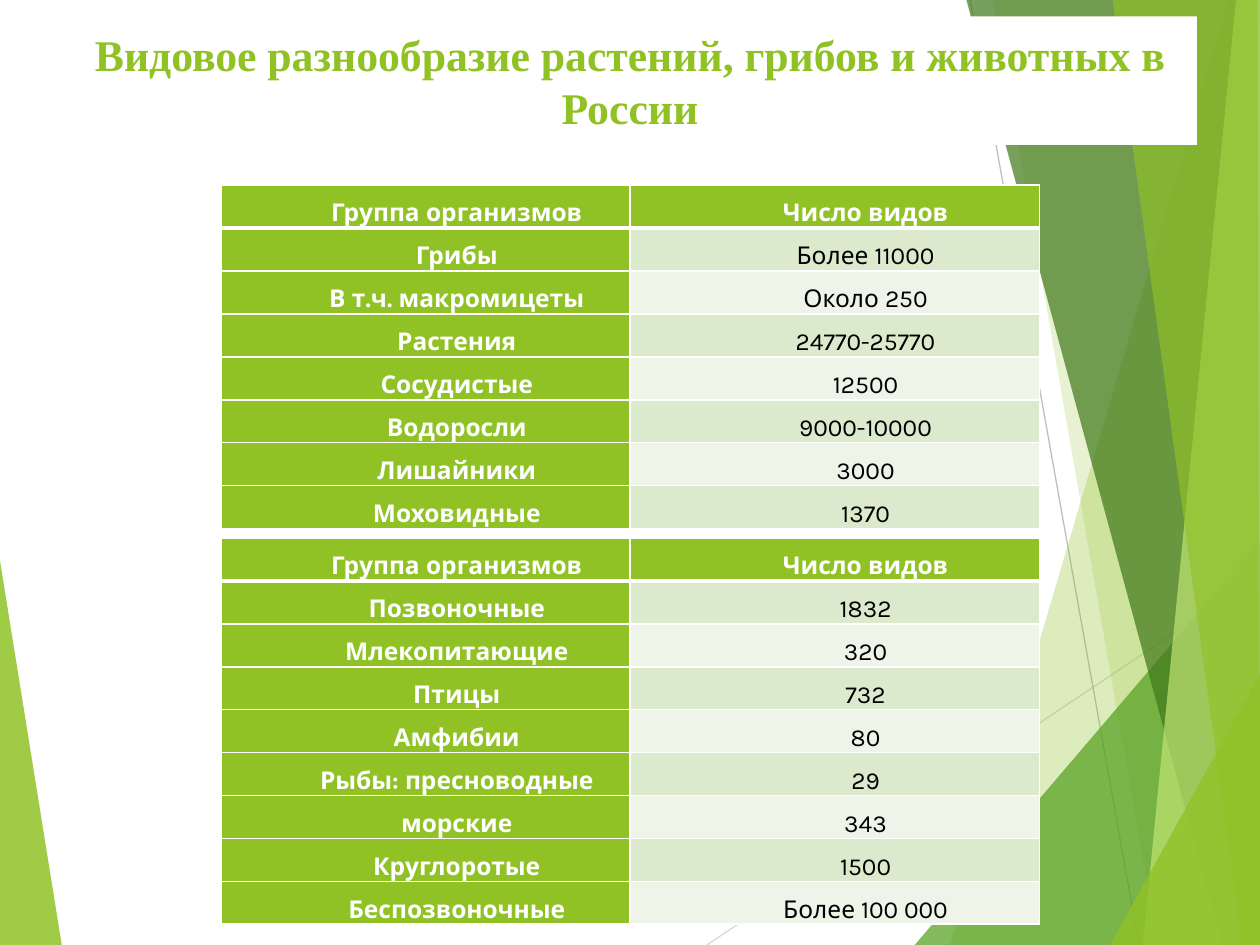
from lxml import etree
from pptx import Presentation
from pptx.dml.color import RGBColor
from pptx.enum.shapes import MSO_CONNECTOR as Connector
from pptx.enum.text import MSO_ANCHOR as Anchor, PP_ALIGN as Align
from pptx.oxml.ns import qn
from pptx.util import Inches, Pt

COLORS = {
    "lime": "90C226", "green": "54A021", "dark": "3F7819", "pale": "C0E474",
    "white": "FFFFFF", "black": "000000", "band": "DBE9CD", "light": "EEF4E8",
    "gray": "BFBFBF", "silver": "D9D9D9",
}


def write_text(frame, text, font="Karla", size=14, color="black", bold=False,
               spacing=1.0, indent=0):
    para = frame.paragraphs[0]
    para.alignment = Align.CENTER
    para.line_spacing = spacing
    properties = para._p.get_or_add_pPr()
    properties.set("marL", "0")
    properties.set("indent", str(Inches(indent)))
    span = para.add_run()
    span.text = text
    span.font.name = font
    span.font.size = Pt(size)
    span.font.bold = bold
    span.font.color.rgb = RGBColor.from_string(COLORS[color])


def add_border(cell, side, width):
    line = etree.SubElement(cell._tc.get_or_add_tcPr(), qn(f"a:ln{side}"),
                            w=str(Pt(width)))
    fill = etree.SubElement(line, qn("a:solidFill"))
    etree.SubElement(fill, qn("a:srgbClr"), val=COLORS["white"])


deck = Presentation()
deck.slide_width, deck.slide_height = Inches(10), Inches(7.5)
page = deck.slides.add_slide(deck.slide_layouts[5])

facets_behind = [
    ("lime", 85, [(0, 4.45), (0.49, 7.5), (0, 7.5)]),
]
facets_front = [
    ("lime", 30, [(9.75, 0), (7.54, 7.5), (10, 7.5), (10, 0)]),
    ("lime", 20, [(7.88, 0), (9.19, 7.5), (10, 7.5), (10, 0)]),
    ("green", 72, [(7.26, 7.5), (10, 4.29), (10, 7.5)]),
    ("dark", 70, [(7.67, 0), (9.7, 7.5), (10, 7.5), (10, 0)]),
    ("pale", 70, [(9.81, 0), (9.07, 7.5), (10, 7.5), (10, 0)]),
    ("lime", 65, [(8.83, 0), (9.86, 7.5), (10, 7.5), (9.98, 0)]),
    ("lime", 80, [(8.81, 7.5), (10, 5.35), (10, 7.5)]),
]
rays = [("silver", (5.61, 7.5), (10, 4.57)), ("gray", (7.7, 0), (9.04, 7.5))]

for color, start, end in rays:
    ray = page.shapes.add_connector(
        Connector.STRAIGHT, *(Inches(value) for value in start + end))
    ray.line.color.rgb = RGBColor.from_string(COLORS[color])
    ray.line.width = Pt(0.75)
    etree.SubElement(ray._element.spPr, qn("a:effectLst"))

for color, opacity, points in facets_behind + facets_front:
    corners = [(Inches(x), Inches(y)) for x, y in points]
    builder = page.shapes.build_freeform(*corners[0])
    builder.add_line_segments(corners[1:], close=True)
    facet = builder.convert_to_shape()
    facet.shadow.inherit = False
    facet.line.fill.background()
    facet.fill.solid()
    facet.fill.fore_color.rgb = RGBColor.from_string(COLORS[color])
    tint = facet._element.spPr.find(qn("a:solidFill"))[0]
    etree.SubElement(tint, qn("a:alpha"), val=str(opacity * 1000))

title = page.shapes.title
page.shapes._spTree.append(title._element)
title.left, title.top = Inches(0.5), Inches(0.13)
title.width, title.height = Inches(9), Inches(1.02)
title.fill.solid()
title.fill.fore_color.rgb = RGBColor.from_string(COLORS["white"])
title.text_frame.word_wrap = True
title.text_frame.vertical_anchor = Anchor.MIDDLE
write_text(title.text_frame,
           "Видовое разнообразие растений, грибов и животных в России",
           font="Times New Roman", size=25, color="lime", bold=True)

header = ("Группа организмов", "Число видов")
plants = [
    header, ("Грибы", "Более 11000"), ("В т.ч. макромицеты", "Около 250"),
    ("Растения", "24770-25770"), ("Сосудистые", "12500"),
    ("Водоросли", "9000-10000"), ("Лишайники", "3000"), ("Моховидные", "1370"),
]
animals = [
    header, ("Позвоночные", "1832"), ("Млекопитающие", "320"), ("Птицы", "732"),
    ("Амфибии", "80"), ("Рыбы: пресноводные", "29"), ("морские", "343"),
    ("Круглоротые", "1500"), ("Беспозвоночные", "Более 100 000"),
]
row_height = 0.34

for top, rows in [(1.47, plants), (4.27, animals)]:
    table = page.shapes.add_table(
        len(rows), 2, Inches(1.76), Inches(top), Inches(6.49),
        Inches(row_height * len(rows))).table
    table.columns[0].width, table.columns[1].width = Inches(3.24), Inches(3.25)
    for row, values in enumerate(rows):
        for column, text in enumerate(values):
            cell = table.cell(row, column)
            cell.margin_left = cell.margin_right = Inches(0.07)
            cell.margin_top = cell.margin_bottom = 0
            heading = row == 0 or column == 0
            for side in "LRTB":
                thick = (row, side) in [(0, "B"), (1, "T")]
                add_border(cell, side, 3 if thick else 1)
            fill = "lime" if heading else "band" if row % 2 else "light"
            cell.fill.solid()
            cell.fill.fore_color.rgb = RGBColor.from_string(COLORS[fill])
            write_text(cell.text_frame, text, bold=heading, spacing=1.5,
                       color="white" if heading else "black", indent=0.49)

deck.save("out.pptx")
